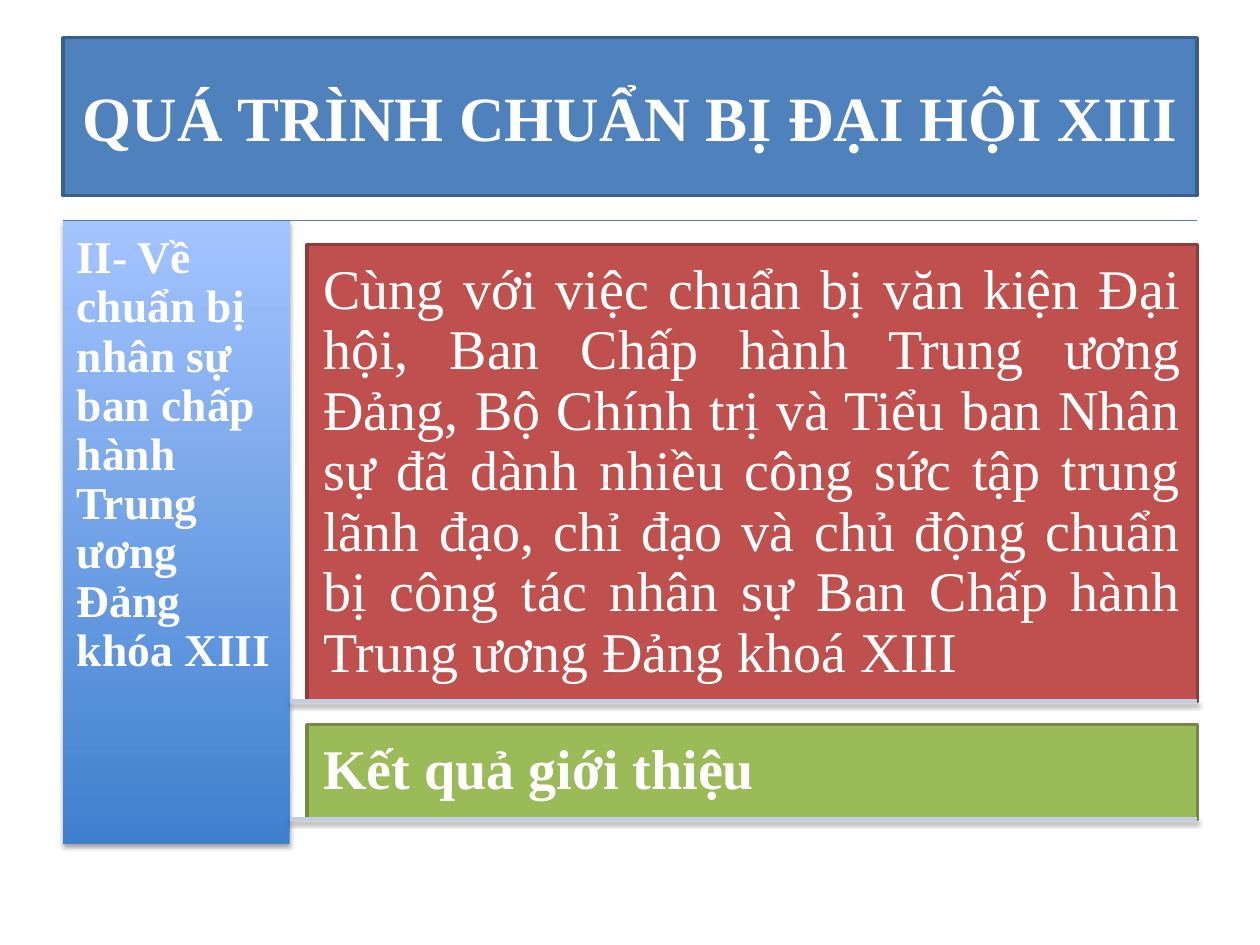
"""Build the slide on preparing the XIII Congress, with a side heading and two panels."""
from dataclasses import dataclass
from typing import Optional

from lxml.etree import SubElement
from pptx import Presentation
from pptx.dml.color import RGBColor
from pptx.enum.shapes import MSO_CONNECTOR, MSO_SHAPE
from pptx.enum.text import MSO_ANCHOR as Anchor, PP_ALIGN as Align
from pptx.oxml.ns import qn
from pptx.util import Cm, Pt

FONT = "Times New Roman"
LEFT, RIGHT = 1.27, 24.13
LIST_TOP, GAP = 4.45, 0.48
HEADING_WIDTH, HEADING_HEIGHT = 4.57, 12.57
PANEL_LEFT, PANEL_WIDTH = 6.19, 17.95


@dataclass
class Shadow:
    opacity: int
    distance: float
    blur: float = 3.1


@dataclass
class Panel:
    text: str
    height: float
    fill: str
    border: str
    bold: bool = False
    align: Align = Align.LEFT


HEADING_SHADOW = Shadow(35, 1.8)
RULE_SHADOW = Shadow(38, 1.6)
PANELS = [
    Panel(
        "Cùng với việc chuẩn bị văn kiện Đại hội, Ban Chấp hành Trung ương Đảng, "
        "Bộ Chính trị và Tiểu ban Nhân sự đã dành nhiều công sức tập trung lãnh đạo, "
        "chỉ đạo và chủ động chuẩn bị công tác nhân sự Ban Chấp hành Trung ương Đảng "
        "khoá XIII",
        9.2, "C0504D", "8E3B39", align=Align.JUSTIFY,
    ),
    Panel("Kết quả giới thiệu", 1.9, "9BBB59", "738A42", bold=True),
]


def color(hex_code: str) -> RGBColor:
    return RGBColor.from_string(hex_code)


def set_effects(item, shadow: Optional[Shadow]) -> None:
    effects = SubElement(item._element.spPr, qn("a:effectLst"))
    if shadow:
        outer = SubElement(
            effects, qn("a:outerShdw"), blurRad=str(Pt(shadow.blur)),
            dist=str(Pt(shadow.distance)), dir="5400000", rotWithShape="0",
        )
        black = SubElement(outer, qn("a:srgbClr"), val="000000")
        SubElement(black, qn("a:alpha"), val=str(shadow.opacity * 1000))


def add_box(slide, left: float, top: float, width: float, height: float,
            fills: list[str], border: Optional[str] = None,
            shadow: Optional[Shadow] = None):
    box = slide.shapes.add_shape(
        MSO_SHAPE.RECTANGLE, Cm(left), Cm(top), Cm(width), Cm(height))
    if len(fills) > 1:
        box.fill.gradient()
        box.fill.gradient_angle = 90
        for stop, shade in zip(box.fill.gradient_stops, fills):
            stop.color.rgb = color(shade)
    else:
        box.fill.solid()
        box.fill.fore_color.rgb = color(fills[0])
    if border:
        box.line.color.rgb = color(border)
        box.line.width = Pt(2)
    else:
        box.line.fill.background()
    set_effects(box, shadow)
    return box


def add_rule(slide, left: float, top: float, line: str, width: float,
             shadow: Shadow) -> None:
    rule = slide.shapes.add_connector(
        MSO_CONNECTOR.STRAIGHT, Cm(left), Cm(top), Cm(RIGHT), Cm(top))
    rule.line.color.rgb = color(line)
    rule.line.width = Pt(width)
    set_effects(rule, shadow)


def write(box, text: str, *, size: int, bold: bool = True,
          align: Align = Align.LEFT, anchor: Anchor = Anchor.TOP,
          spacing: float = 0.9, inset_x: float = 0.33, inset_y: float = 0.33) -> None:
    frame = box.text_frame
    frame.word_wrap = True
    frame.vertical_anchor = anchor
    frame.margin_left = frame.margin_right = Cm(inset_x)
    frame.margin_top = frame.margin_bottom = Cm(inset_y)
    paragraph = frame.paragraphs[0]
    paragraph.alignment = align
    paragraph.line_spacing = spacing
    run = paragraph.add_run()
    run.text = text
    run.font.name = FONT
    run.font.size = Pt(size)
    run.font.bold = bold
    run.font.color.rgb = color("FFFFFF")


def main() -> None:
    deck = Presentation()
    deck.slide_width, deck.slide_height = Cm(25.4), Cm(19.05)
    slide = deck.slides.add_slide(deck.slide_layouts[6])

    add_rule(slide, LEFT, LIST_TOP, "4F81BD", 0.75, HEADING_SHADOW)
    heading = add_box(slide, LEFT, LIST_TOP, HEADING_WIDTH, HEADING_HEIGHT,
                      ["3F80CE", "A4C4FF"], shadow=HEADING_SHADOW)
    write(heading, "II- Về chuẩn bị nhân sự ban chấp hành Trung ương Đảng khóa XIII",
          size=26, inset_x=0.28, inset_y=0.28)

    bottom = LIST_TOP
    for panel in PANELS:
        top = bottom + GAP
        bottom = top + panel.height
        box = add_box(slide, PANEL_LEFT, top, PANEL_WIDTH, panel.height,
                      [panel.fill], panel.border)
        write(box, panel.text, size=32, bold=panel.bold, align=panel.align)
        add_rule(slide, LEFT + HEADING_WIDTH, bottom, "C2CDE1", 2, RULE_SHADOW)

    title = add_box(slide, LEFT, 0.76, RIGHT - LEFT, 3.18, ["4F81BD"], "3A5F8C")
    write(title, "QUÁ TRÌNH CHUẨN BỊ ĐẠI HỘI XIII", size=36, align=Align.CENTER,
          anchor=Anchor.MIDDLE, spacing=1.0, inset_x=0.25, inset_y=0.13)

    deck.save("out.pptx")


if __name__ == "__main__":
    main()
